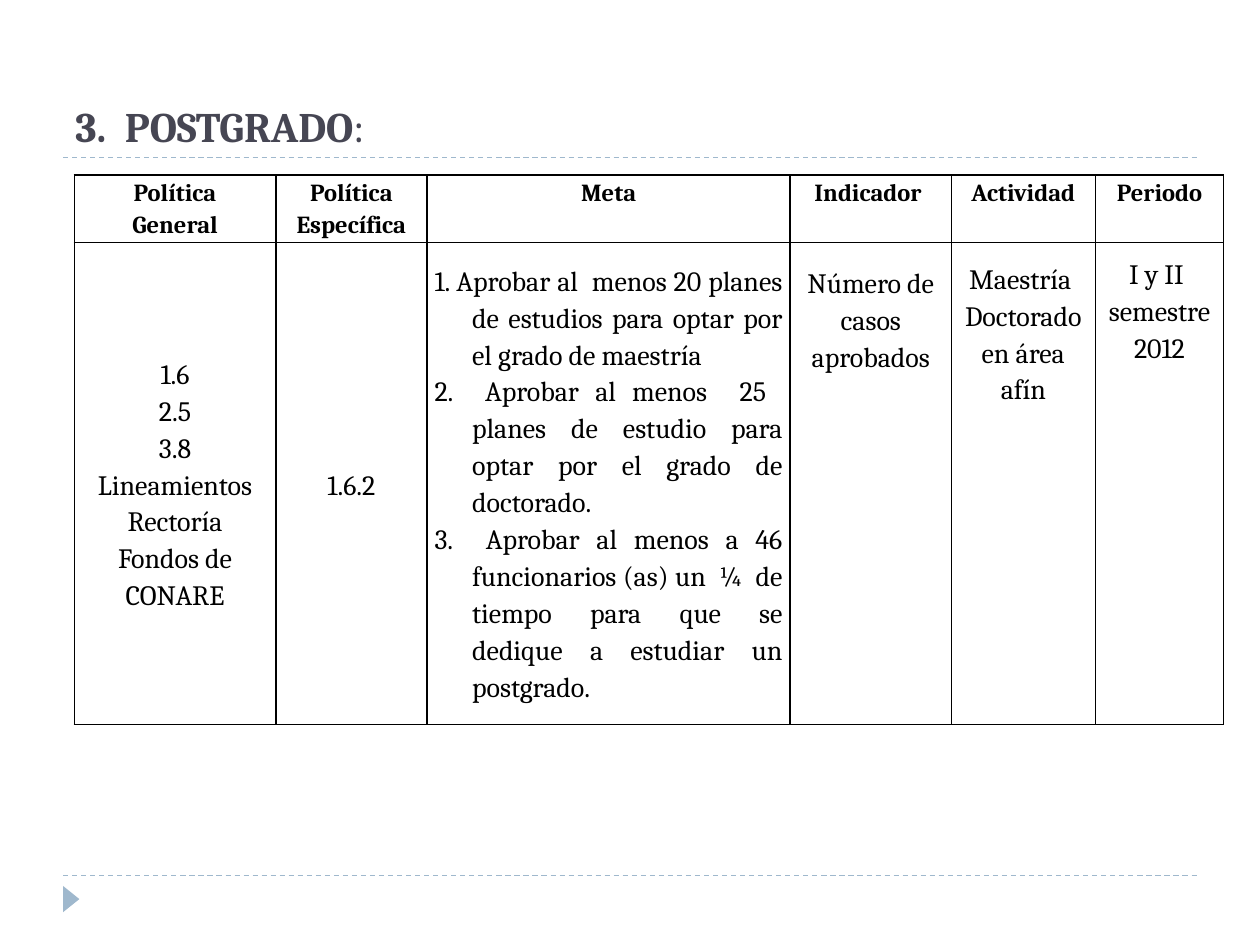
from lxml import etree
from pptx import Presentation
from pptx.dml.color import RGBColor
from pptx.enum.dml import MSO_LINE
from pptx.enum.shapes import MSO_CONNECTOR, MSO_SHAPE
from pptx.enum.text import MSO_ANCHOR, PP_ALIGN
from pptx.oxml import parse_xml
from pptx.oxml.ns import nsdecls, qn
from pptx.util import Cm, Pt

STRAIGHT = MSO_CONNECTOR.STRAIGHT
TRIANGLE = MSO_SHAPE.ISOSCELES_TRIANGLE
DASH = MSO_LINE.DASH
TOP, MIDDLE, BOTTOM = MSO_ANCHOR.TOP, MSO_ANCHOR.MIDDLE, MSO_ANCHOR.BOTTOM
CENTER, JUSTIFY = PP_ALIGN.CENTER, PP_ALIGN.JUSTIFY

FONT = "Cambria"
COLORS = {"title": "464653", "accent": "9FB8CD", "text": "000000", "border": "000000"}

TITLE_RUNS = [("3.  POSTGRADO", True), (":", False)]

# Each column: width in cm, heading paragraphs, body paragraphs,
# body anchor, body alignment, space above the body in cm
COLUMNS = [
    (4.06, ["Política", "General"],
     ["1.6", "2.5", "3.8", "Lineamientos Rectoría", "Fondos de CONARE"],
     MIDDLE, CENTER, 0),
    (3.05, ["Política Específica"], ["1.6.2"], MIDDLE, CENTER, 0),
    (7.32, ["Meta"],
     ["1. Aprobar al  menos 20 planes de estudios para optar por el grado de maestría",
      "2.  Aprobar al menos  25  planes de estudio para optar por el grado de doctorado.",
      "3.  Aprobar al menos a 46 funcionarios (as) un  ¼  de tiempo para que se dedique "
      "a estudiar un postgrado."],
     TOP, JUSTIFY, 0.37),
    (3.25, ["Indicador "], ["Número de casos aprobados"], TOP, CENTER, 0.42),
    (2.9, ["Actividad"], ["Maestría ", "Doctorado en área afín"], TOP, CENTER, 0.33),
    (2.59, ["Periodo"], ["I y II  semestre 2012"], TOP, CENTER, 0.23),
]
ROW_HEIGHTS = (1.3, 8.53)
TABLE_LEFT, TABLE_TOP = 1.5, 3.53
RULE_LEFT, RULE_RIGHT = 1.27, 24.13
RULE_TOPS = (17.65, 3.18)
HANGING_INDENT = 0.76


def color(name):
    return RGBColor.from_string(COLORS[name])


def add_run(paragraph, text, size, bold, color_name):
    run = paragraph.add_run()
    run.text = text
    run.font.name = FONT
    run.font.size = Pt(size)
    run.font.bold = bold
    run.font.color.rgb = color(color_name)


def add_rule(slide, top):
    rule = slide.shapes.add_connector(
        STRAIGHT, Cm(RULE_LEFT), Cm(top), Cm(RULE_RIGHT), Cm(top))
    rule.line.color.rgb = color("accent")
    rule.line.width = Pt(0.75)
    rule.line.dash_style = DASH
    etree.SubElement(rule._element.spPr, qn("a:effectLst"))


def add_marker(slide):
    marker = slide.shapes.add_shape(TRIANGLE, Cm(1.17), Cm(17.96), Cm(0.53), Cm(0.33))
    marker.rotation = 90
    marker.shadow.inherit = False
    marker.fill.solid()
    marker.fill.fore_color.rgb = color("accent")
    marker.line.fill.background()


def add_title(slide):
    box = slide.shapes.add_textbox(Cm(1.27), Cm(0.43), Cm(22.86), Cm(2.74))
    frame = box.text_frame
    frame.word_wrap = True
    frame.vertical_anchor = BOTTOM
    for text, bold in TITLE_RUNS:
        add_run(frame.paragraphs[0], text, 24, bold, "title")


def set_borders(cell):
    properties = cell._tc.get_or_add_tcPr()
    for index, side in enumerate("LRTB"):
        properties.insert(index, parse_xml(
            f'<a:ln{side} {nsdecls("a")} w="12700"><a:solidFill>'
            f'<a:srgbClr val="{COLORS["border"]}"/></a:solidFill></a:ln{side}>'))


def fill_cell(cell, texts, size, bold, anchor=TOP, alignment=CENTER, space_above=0):
    cell.fill.background()
    set_borders(cell)
    cell.margin_left = cell.margin_right = Cm(0.15)
    cell.margin_top, cell.margin_bottom = Cm(space_above), 0
    cell.vertical_anchor = anchor
    frame = cell.text_frame
    for index, text in enumerate(texts):
        paragraph = frame.add_paragraph() if index else frame.paragraphs[0]
        paragraph.alignment = alignment
        paragraph.line_spacing = 1.15
        if alignment == JUSTIFY:
            properties = paragraph._p.get_or_add_pPr()
            properties.set("marL", str(Cm(HANGING_INDENT)))
            properties.set("indent", str(-Cm(HANGING_INDENT)))
        add_run(paragraph, text, size, bold, "text")


def add_plan_table(slide):
    width = sum(column[0] for column in COLUMNS)
    table = slide.shapes.add_table(
        len(ROW_HEIGHTS), len(COLUMNS), Cm(TABLE_LEFT), Cm(TABLE_TOP),
        Cm(width), Cm(sum(ROW_HEIGHTS))).table
    table.first_row = table.horz_banding = False
    for row, height in zip(table.rows, ROW_HEIGHTS):
        row.height = Cm(height)
    for index, (width, heading, body, anchor, alignment, space) in enumerate(COLUMNS):
        table.columns[index].width = Cm(width)
        fill_cell(table.cell(0, index), heading, 14, True)
        fill_cell(table.cell(1, index), body, 16, False, anchor, alignment, space)


def main():
    presentation = Presentation()
    presentation.slide_width, presentation.slide_height = Cm(25.4), Cm(19.05)
    slide = presentation.slides.add_slide(presentation.slide_layouts[6])
    for top in RULE_TOPS:
        add_rule(slide, top)
    add_marker(slide)
    add_title(slide)
    add_plan_table(slide)
    presentation.save("out.pptx")


if __name__ == "__main__":
    main()
